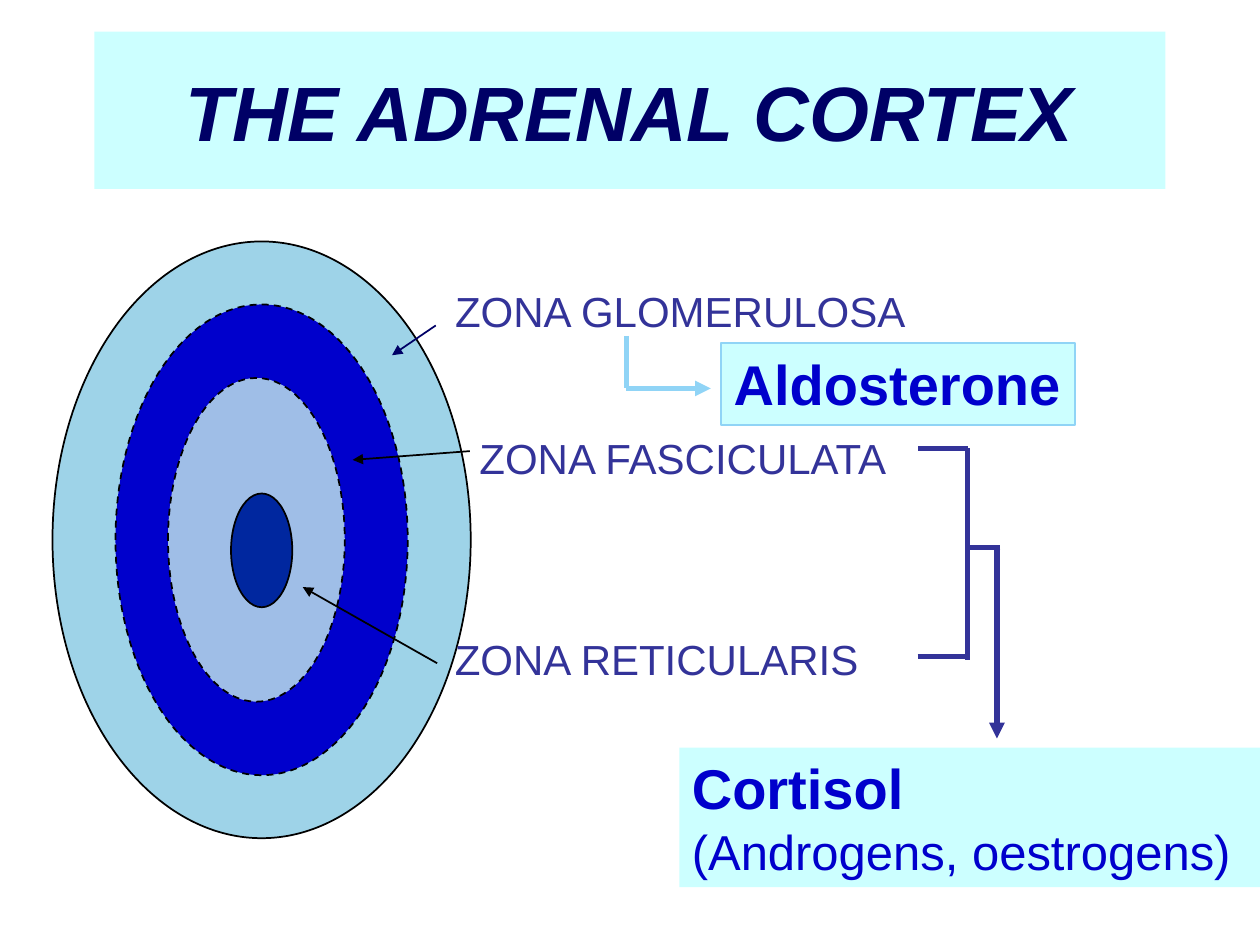
import pptx
import pptx.util
import pptx.dml.color
import pptx.enum.dml
import pptx.enum.shapes
import pptx.enum.text
import pptx.oxml
import pptx.oxml.ns
import lxml.etree

Pt = pptx.util.Pt
SHAPE = pptx.enum.shapes.MSO_SHAPE
ALIGN = pptx.enum.text.PP_ALIGN
ANCHOR = pptx.enum.text.MSO_ANCHOR
COLORS = {
    "panel": "CCFFFF", "title": "000066", "black": "000000",
    "glomerulosa": "9ED3E8", "fasciculata": "0000CC", "reticularis": "9FBEE7",
    "medulla": "00279F", "label": "333399", "sky": "90D4F6", "hormone": "0000CC",
}


def color(name):
    return pptx.dml.color.RGBColor.from_string(COLORS[name])


def write(shape, lines, text_color, wrap=True, align=ALIGN.LEFT, anchor=ANCHOR.TOP):
    """Fill the shape with lines of (text, size, bold, italic)."""
    frame = shape.text_frame
    frame.word_wrap = wrap
    frame.vertical_anchor = anchor
    for index, (text, size, bold, italic) in enumerate(lines):
        paragraph = frame.add_paragraph() if index else frame.paragraphs[0]
        paragraph.alignment = align
        run = paragraph.add_run()
        run.text = text
        run.font.name = "Arial"
        run.font.size = Pt(size)
        run.font.bold = bold
        run.font.italic = italic
        run.font.color.rgb = color(text_color)


presentation = pptx.Presentation()
presentation.slide_width = Pt(720)
presentation.slide_height = Pt(540)
slide = presentation.slides.add_slide(presentation.slide_layouts[6])

# Title, gland layers from the outside in, and hormone boxes
shapes = {}
for name, kind, box, fill, outline, dashed in [
    ("title", SHAPE.RECTANGLE, (54, 18, 612, 90), "panel", None, False),
    ("glomerulosa", SHAPE.OVAL, (30, 138, 239, 341), "glomerulosa", "black", False),
    ("fasciculata", SHAPE.OVAL, (66, 174, 167, 269), "fasciculata", "black", True),
    ("reticularis", SHAPE.OVAL, (96, 216, 101, 185), "reticularis", "black", True),
    ("medulla", SHAPE.OVAL, (132, 282, 35, 65), "medulla", "black", False),
    ("aldosterone", SHAPE.RECTANGLE, (412.2, 196, 202, 47), "panel", "sky", False),
    ("cortisol", SHAPE.RECTANGLE, (388.3, 427.2, 331.7, 79.8), "panel", None, False),
]:
    shape = slide.shapes.add_shape(kind, *map(Pt, box))
    shape.shadow.inherit = False
    shape.fill.solid()
    shape.fill.fore_color.rgb = color(fill)
    if outline:
        shape.line.color.rgb = color(outline)
        shape.line.width = Pt(1)
    else:
        shape.line.fill.background()
    if dashed:
        shape.line.dash_style = pptx.enum.dml.MSO_LINE.DASH
    shapes[name] = shape

write(shapes["title"], [("THE ADRENAL CORTEX", 44, True, True)], "title",
      align=ALIGN.CENTER, anchor=ANCHOR.MIDDLE)
write(shapes["aldosterone"], [("Aldosterone", 32, True, False)], "hormone", wrap=False)
write(shapes["cortisol"], [("Cortisol", 32, True, False),
                           ("(Androgens, oestrogens)", 28, False, False)], "hormone")

# Zone labels
for text, left, top, width in [
    ("ZONA GLOMERULOSA", 253, 159.6, 274),
    ("ZONA FASCICULATA", 266.9, 243.5, 249),
    ("ZONA RETICULARIS", 252.8, 358.5, 248),
]:
    label = slide.shapes.add_textbox(Pt(left), Pt(top), Pt(width), Pt(36))
    write(label, [(text, 24, False, False)], "label", wrap=False)

# Pointers to the layers, the aldosterone elbow and the cortisol bracket
for start, end, line_color, width, arrow in [
    ((249, 186), (224, 203), "title", 1, True),
    ((268.5, 257.8), (201.5, 262.8), "black", 1, True),
    ((249.8, 379), (173, 335.5), "black", 1, True),
    ((358, 192), (358, 222), "sky", 3, False),
    ((358, 222), (406.2, 222), "sky", 3, True),
    ((524.3, 375.3), (553, 375.3), "label", 3, False),
    ((553, 256.3), (553, 377.2), "label", 3, False),
    ((553, 256.3), (524.3, 256.3), "label", 3, False),
    ((569.7, 313), (569.7, 422), "label", 3, True),
    ((571.7, 313), (553, 313), "label", 3, False),
]:
    connector = slide.shapes.add_connector(
        pptx.enum.shapes.MSO_CONNECTOR.STRAIGHT, *map(Pt, start + end))
    connector.line.color.rgb = color(line_color)
    connector.line.width = Pt(width)
    if arrow:
        lxml.etree.SubElement(connector.line._get_or_add_ln(),
                              pptx.oxml.ns.qn("a:tailEnd"), type="triangle")
    lxml.etree.SubElement(connector._element.spPr, pptx.oxml.ns.qn("a:effectLst"))

presentation.save("out.pptx")
